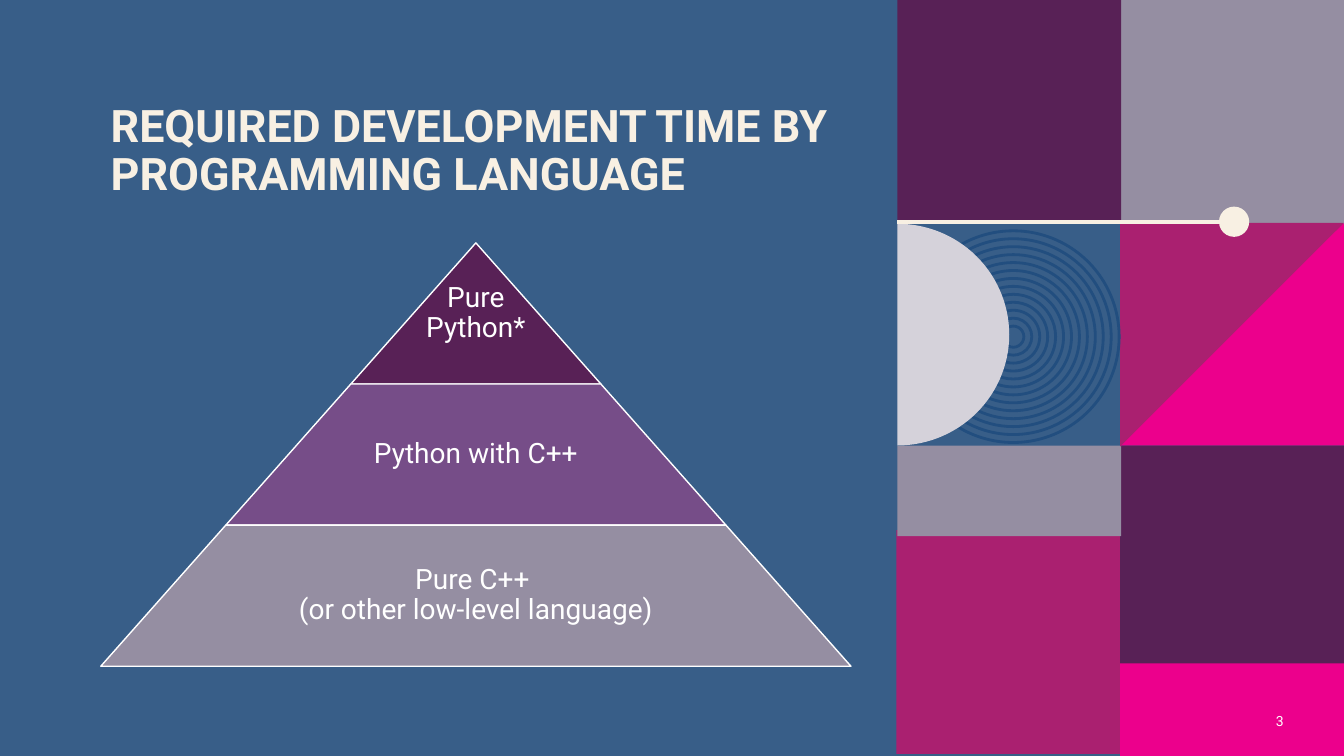
from math import cos, pi, sin

from lxml import etree
from pptx import Presentation
from pptx.dml.color import RGBColor
from pptx.enum import shapes, text
from pptx.oxml.ns import qn
from pptx.util import Inches, Pt

KIND = shapes.MSO_SHAPE
BLUE, RING = "385E88", "224E7F"
PLUM, VIOLET, GREY, PALE = "582156", "764D88", "958EA2", "D5D2DA"
BERRY, PINK = "AA2070", "EC008C"
CREAM, WHITE = "F8F0E3", "FFFFFF"

TILES = [
    (11.11, 2.2, 2.22, PINK),
    (11.11, 0, 2.22, GREY),
    (8.9, -0.01, 2.22, PLUM),
    (8.89, 5.26, 2.22, BERRY),
    (11.11, 4.42, 2.22, PLUM),
    (11.11, 6.58, 0.92, PINK),
    (8.9, 4.42, 0.9, GREY),
]
# label, fill, label width
TIERS = [
    ("Pure\nPython*", PLUM, 2.48),
    ("Python with C++", VIOLET, 3.22),
    ("Pure C++ \n(or other low-level language)", GREY, 4.83),
]


def color(code):
    return RGBColor.from_string(code)


def paint(shape, fill=None, line=None, width=1):
    shape.shadow.inherit = False
    if fill:
        shape.fill.solid()
        shape.fill.fore_color.rgb = color(fill)
    else:
        shape.fill.background()
    if line:
        shape.line.color.rgb = color(line)
        shape.line.width = Pt(width)
    else:
        shape.line.fill.background()


def add_shape(slide, kind, box, **style):
    shape = slide.shapes.add_shape(kind, *map(Inches, box))
    paint(shape, **style)
    return shape


def add_outline(slide, points, fill):
    spots = [(Inches(x), Inches(y)) for x, y in points]
    form = slide.shapes.build_freeform(*spots[0])
    form.add_line_segments(spots[1:], close=True)
    paint(form.convert_to_shape(), fill)


def add_line(slide, start, end, code, width):
    line = slide.shapes.add_connector(
        shapes.MSO_CONNECTOR.STRAIGHT, *map(Inches, start + end))
    line.line.color.rgb = color(code)
    line.line.width = Pt(width)
    etree.SubElement(line._element.spPr, qn("a:effectLst"))


def add_text(slide, words, box, size=20, code=WHITE, bold=False, align="CENTER",
             anchor="MIDDLE", inset=(0.03, 0.03), space=0.9):
    """Place one paragraph; inset is (sides, top and bottom)."""
    frame = slide.shapes.add_textbox(*map(Inches, box)).text_frame
    frame.word_wrap = True
    frame.vertical_anchor = text.MSO_ANCHOR[anchor]
    frame.margin_left = frame.margin_right = Inches(inset[0])
    frame.margin_top = frame.margin_bottom = Inches(inset[1])
    para = frame.paragraphs[0]
    para.text = words
    para.alignment = text.PP_ALIGN[align]
    para.line_spacing = space
    for run in para.runs:
        font = run.font
        font.name, font.size, font.bold = "Roboto", Pt(size), bold
        font.color.rgb = color(code)


def add_rings(slide, x, y, count=13, outer=1.05, inner=0.105):
    for i in range(count):
        r = outer - i * (outer - inner) / (count - 1)
        add_shape(slide, KIND.OVAL, (x - r, y - r, 2 * r, 2 * r),
                  line=RING, width=2)


def add_half(slide, x, y, rx, ry, steps=60):
    """Draw the right half of an ellipse centred on x, y."""
    turns = [pi * i / steps - pi / 2 for i in range(steps + 1)]
    add_outline(slide, [(x + rx * cos(t), y + ry * sin(t)) for t in turns], PALE)


def add_mosaic(slide):
    for x, y, high, fill in TILES:
        add_shape(slide, KIND.RECTANGLE, (x, y, 2.22, high), fill=fill)
    add_outline(slide, [(13.33, 2.21), (11.11, 4.43), (11.11, 2.21)], BERRY)
    add_rings(slide, 10.05, 3.34)
    add_half(slide, 8.9, 3.32, 1.11, 1.1)
    add_line(slide, (8.9, 2.2), (12.23, 2.2), CREAM, 3)
    add_shape(slide, KIND.OVAL, (12.09, 2.05, 0.3, 0.3), fill=CREAM)


def add_pyramid(slide, mid=4.72, top=2.41, step=2.48, high=1.4):
    for i, (label, fill, room) in enumerate(TIERS):
        wide, y = step * (i + 1), top + high * i
        tier = add_shape(slide, KIND.TRAPEZOID, (mid - wide / 2, y, wide, high),
                         fill=fill, line=WHITE)
        tier.adjustments[0] = step / 2 / high
        add_text(slide, label, (mid - room / 2, y, room, high))


def main():
    deck = Presentation()
    deck.slide_width, deck.slide_height = Inches(13.33), Inches(7.5)
    slide = deck.slides.add_slide(deck.slide_layouts[6])
    slide.background.fill.solid()
    slide.background.fill.fore_color.rgb = color(BLUE)
    add_mosaic(slide)
    add_text(slide, "REQUIRED DEVELOPMENT TIME BY PROGRAMMING LANGUAGE",
             (1, 0.98, 7.44, 1.45), size=32, code=CREAM, bold=True,
             align="LEFT", anchor="TOP", inset=(0.1, 0.05))
    add_pyramid(slide)
    add_text(slide, "3", (12.33, 6.95, 0.5, 0.4), size=10, align="RIGHT",
             inset=(0.1, 0.05), space=1.0)
    deck.save("out.pptx")


if __name__ == "__main__":
    main()
